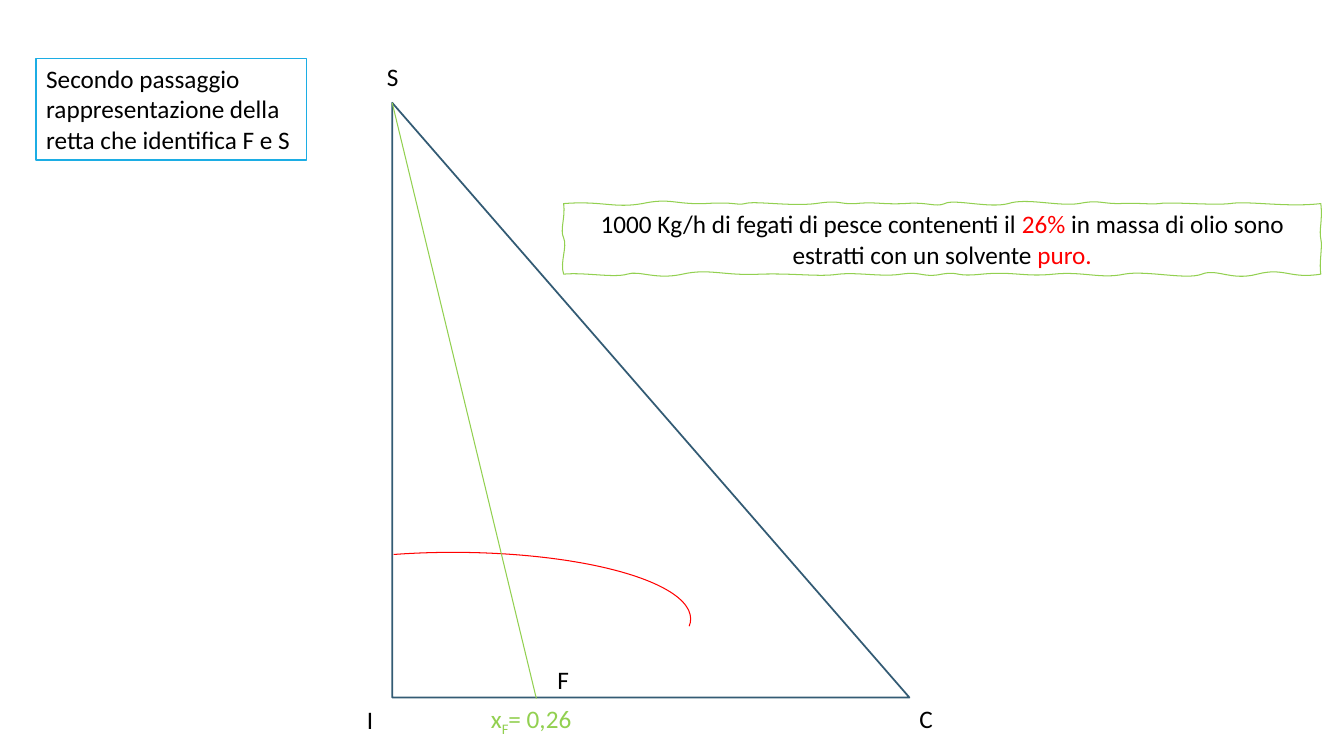
from dataclasses import dataclass

from lxml import etree
from pptx import Presentation
from pptx.dml.color import RGBColor
from pptx.enum.shapes import MSO_CONNECTOR, MSO_SHAPE
from pptx.enum.text import MSO_ANCHOR, MSO_AUTO_SIZE, PP_ALIGN
from pptx.oxml.ns import qn
from pptx.util import Inches, Pt


@dataclass(frozen=True)
class Theme:
    font: str = "Calibri"
    size: int = 18
    thin: float = 0.75
    medium: float = 1.25
    text: str = "000000"
    paper: str = "FFFFFF"
    triangle: str = "335B74"
    step: str = "1CADE4"
    feed: str = "92D050"
    accent: str = "FF0000"


THEME = Theme()

# Solvent corner of the triangle, and the feed point on its base
SOLVENT = (3.89, 1.02)
FEED = (5.32, 6.93)

# Wavy frame: start point, then cubic curves (two control points and an end)
FRAME_START = (5.59, 2.02)
FRAME_CURVES = [
    (5.97, 1.99, 6.09, 2.07, 6.37, 2.02),
    (6.65, 1.96, 6.69, 2.03, 6.99, 2.02),
    (7.3, 2, 7.3, 2.04, 7.39, 2.02),
    (7.48, 1.99, 7.84, 2.05, 8.09, 2.02),
    (8.35, 1.98, 8.31, 2.03, 8.49, 2.02),
    (8.68, 2, 8.74, 2.03, 8.97, 2.02),
    (9.2, 2, 9.28, 2.06, 9.37, 2.02),
    (9.46, 1.97, 9.81, 2.07, 10, 2.02),
    (10.18, 1.96, 10.49, 2.05, 10.7, 2.02),
    (10.9, 1.98, 10.91, 2.02, 11.1, 2.02),
    (11.28, 2.01, 11.4, 2.03, 11.5, 2.02),
    (11.6, 2, 12.03, 2.04, 12.2, 2.02),
    (12.37, 1.99, 12.76, 2.06, 13.1, 2.02),
    (13.12, 2.19, 13.08, 2.28, 13.1, 2.37),
    (13.12, 2.45, 13.08, 2.61, 13.1, 2.72),
    (12.79, 2.77, 12.74, 2.65, 12.47, 2.72),
    (12.21, 2.79, 12.07, 2.66, 11.92, 2.72),
    (11.77, 2.78, 11.37, 2.68, 11.15, 2.72),
    (10.92, 2.77, 10.73, 2.69, 10.45, 2.72),
    (10.16, 2.75, 10.04, 2.69, 9.74, 2.72),
    (9.45, 2.75, 9.53, 2.69, 9.34, 2.72),
    (9.16, 2.76, 9.14, 2.69, 8.94, 2.72),
    (8.75, 2.75, 8.51, 2.7, 8.32, 2.72),
    (8.12, 2.75, 7.9, 2.71, 7.54, 2.72),
    (7.19, 2.74, 7.03, 2.66, 6.77, 2.72),
    (6.5, 2.78, 6.34, 2.68, 6.22, 2.72),
    (6.09, 2.76, 5.8, 2.7, 5.59, 2.72),
    (5.55, 2.6, 5.63, 2.45, 5.59, 2.36),
    (5.55, 2.28, 5.61, 2.16, 5.59, 2.02),
]


def rgb(code):
    return RGBColor.from_string(code)


def set_line(item, color, width):
    item.line.color.rgb = rgb(color)
    item.line.width = Pt(width)


def set_outline(shape, color, width):
    """Give a shape a plain line, with no fill and no shadow."""
    shape.shadow.inherit = False
    shape.fill.background()
    set_line(shape, color, width)


def write_text(frame, paragraphs, color=THEME.text, align=PP_ALIGN.LEFT,
               anchor=MSO_ANCHOR.TOP, wrap=True):
    """Fill a frame; each paragraph is a list of (text, format) runs."""
    frame.word_wrap = wrap
    frame.auto_size = MSO_AUTO_SIZE.SHAPE_TO_FIT_TEXT
    frame.vertical_anchor = anchor
    for index, runs in enumerate(paragraphs):
        paragraph = frame.add_paragraph() if index else frame.paragraphs[0]
        paragraph.alignment = align
        for text, style in runs:
            run = paragraph.add_run()
            run.text = text
            run.font.name = THEME.font
            run.font.size = Pt(THEME.size)
            run.font.color.rgb = rgb(style.get("color", color))
            if "baseline" in style:
                run.font._element.set("baseline", str(style["baseline"]))


def add_label(slide, box, runs, color=THEME.text):
    label = slide.shapes.add_textbox(*map(Inches, box))
    write_text(label.text_frame, [runs], color=color, wrap=False)


def add_outline(slide, preset, box, color, width):
    outline = slide.shapes.add_shape(preset, *map(Inches, box))
    set_outline(outline, color, width)
    return outline


def add_straight_line(slide, start, end, color, width):
    line = slide.shapes.add_connector(
        MSO_CONNECTOR.STRAIGHT, *map(Inches, (*start, *end)))
    set_line(line, color, width)
    etree.SubElement(line._element.spPr, qn("a:effectLst"))


def bend_segments(shape, curves):
    """Turn each straight segment of a freeform into its cubic curve."""
    segments = list(shape._element.iter(qn("a:lnTo")))
    for segment, curve in zip(segments, curves):
        segment.tag = qn("a:cubicBezTo")
        for index, (x, y) in enumerate((curve[:2], curve[2:4])):
            control = etree.Element(qn("a:pt"))
            control.set("x", str(Inches(x) - shape.left))
            control.set("y", str(Inches(y) - shape.top))
            segment.insert(index, control)


def add_wavy_frame(slide, paragraphs):
    builder = slide.shapes.build_freeform(*map(Inches, FRAME_START))
    builder.add_line_segments(
        [tuple(map(Inches, curve[4:])) for curve in FRAME_CURVES])
    frame = builder.convert_to_shape()
    bend_segments(frame, FRAME_CURVES)
    set_outline(frame, THEME.feed, THEME.thin)
    write_text(frame.text_frame, paragraphs, align=PP_ALIGN.CENTER,
               anchor=MSO_ANCHOR.MIDDLE)


def main():
    deck = Presentation()
    deck.slide_width, deck.slide_height = Inches(13.33), Inches(7.5)
    slide = deck.slides.add_slide(deck.slide_layouts[6])

    add_outline(slide, MSO_SHAPE.RIGHT_TRIANGLE, (*SOLVENT, 5.13, 5.9),
                THEME.triangle, THEME.medium)
    add_label(slide, (4.77, 6.93, 1.11, 0.4),
              [("x", {}), ("F", {"baseline": -25000}), ("= 0,26", {})],
              color=THEME.feed)

    solubility_arc = add_outline(slide, MSO_SHAPE.ARC, (2.14, 5.48, 4.71, 1.32),
                                 THEME.accent, THEME.thin)
    solubility_arc.adjustments[0] = 136.35
    solubility_arc.adjustments[1] = 1.07

    step_box = add_outline(slide, MSO_SHAPE.RECTANGLE, (0.36, 0.58, 2.68, 1.01),
                           THEME.step, THEME.medium)
    step_box.fill.solid()
    step_box.fill.fore_color.rgb = rgb(THEME.paper)
    step_lines = ("Secondo passaggio", "rappresentazione della",
                  "retta che identifica F e S")
    write_text(step_box.text_frame, [[(line, {})] for line in step_lines])

    accent = {"color": THEME.accent}
    add_wavy_frame(slide, [[
        ("1000 Kg/h di fegati di pesce contenenti il ", {}),
        ("26%", accent),
        (" in massa di olio sono estratti con un solvente ", {}),
        ("puro.", accent),
    ]])
    add_straight_line(slide, SOLVENT, FEED, THEME.feed, THEME.thin)

    for letter, x, y, width in (("S", 3.74, 0.56, 0.33), ("F", 5.43, 6.54, 0.31),
                                ("I", 3.54, 6.94, 0.26), ("C", 9.02, 6.93, 0.35)):
        add_label(slide, (x, y, width, 0.4), [(letter, {})])

    deck.save("out.pptx")


if __name__ == "__main__":
    main()
